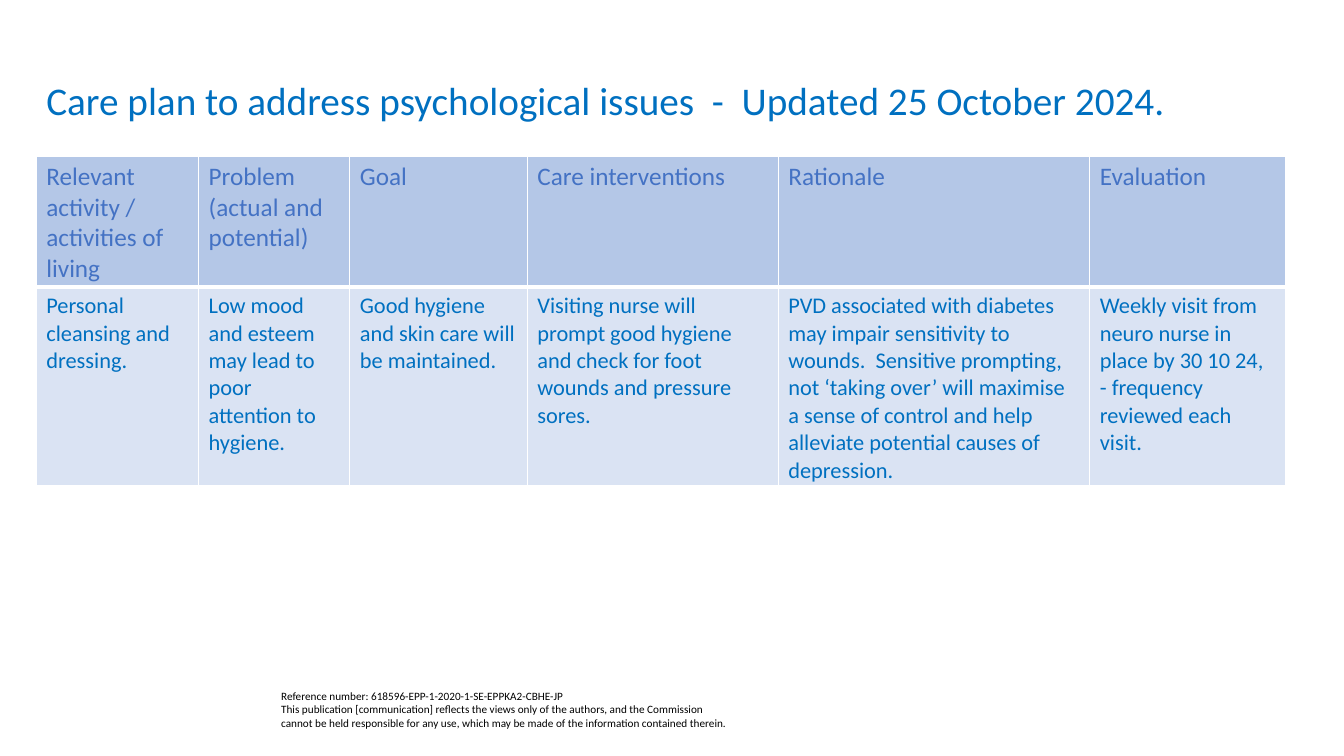
from lxml import etree
from pptx import Presentation, util as u
from pptx.dml.color import RGBColor
from pptx.enum import text
from pptx.oxml.ns import qn

PX = 9144  # 100 px to the inch
COLOURS = {"blue": "0070C0", "heading": "4472C4", "header_fill": "B4C7E7",
           "body_fill": "DAE3F3", "border": "FFFFFF", "black": "000000"}


def write(frame, words, size, colour):
    frame.word_wrap = True
    paragraph = frame.paragraphs[0]
    paragraph.text = words
    paragraph.alignment = text.PP_ALIGN.LEFT
    for run in paragraph.runs:
        run.font.name = "Calibri"
        run.font.size = u.Pt(size)
        run.font.bold = False
        run.font.color.rgb = RGBColor.from_string(COLOURS[colour])


def add_borders(cell, bottom_width):
    properties = cell._tc.get_or_add_tcPr()
    for side, width in zip("LRTB", (1, 1, 1, bottom_width)):
        line = etree.SubElement(properties, qn(f"a:ln{side}"), w=str(u.Pt(width)))
        fill = etree.SubElement(line, qn("a:solidFill"))
        etree.SubElement(fill, qn("a:srgbClr"), val=COLOURS["border"])


deck = Presentation()
deck.slide_width, deck.slide_height = 1333 * PX, 750 * PX
slide = deck.slides.add_slide(deck.slide_layouts[5])

title = slide.shapes.title
title.left, title.top, title.width, title.height = [n * PX for n in (36, 71, 1221, 57)]
title.text_frame.vertical_anchor = text.MSO_ANCHOR.TOP
title.text_frame.auto_size = text.MSO_AUTO_SIZE.SHAPE_TO_FIT_TEXT
write(title.text_frame,
      "Care plan to address psychological issues  -  Updated 25 October 2024.", 28, "blue")

reference = slide.shapes.add_textbox(*[n * PX for n in (269, 679, 464, 50)])
reference.text_frame.auto_size = text.MSO_AUTO_SIZE.SHAPE_TO_FIT_TEXT
write(reference.text_frame,
      "Reference number: 618596-EPP-1-2020-1-SE-EPPKA2-CBHE-JP\n"
      "This publication [communication] reflects the views only of the authors, and the "
      "Commission cannot be held responsible for any use, which may be made of the "
      "information contained therein.", 8, "black")

# Column width, heading, entry
plan_columns = [
    (161, "Relevant activity / activities of living", "Personal cleansing and dressing."),
    (150, "Problem (actual and potential)",
     "Low mood and esteem may lead to poor attention to hygiene."),
    (176, "Goal", "Good hygiene and skin care will be maintained."),
    (249, "Care interventions",
     "Visiting nurse will prompt good hygiene and check for foot wounds and pressure sores."),
    (309, "Rationale",
     "PVD associated with diabetes may impair sensitivity to wounds.  Sensitive prompting, "
     "not ‘taking over’ will maximise a sense of control and help alleviate potential "
     "causes of depression."),
    (194, "Evaluation",
     "Weekly visit from neuro nurse in place by 30 10 24, - frequency reviewed each visit."),
]
# Row height, text size, text colour, fill, bottom border
row_formats = [(130, 18, "heading", "header_fill", 3), (197, 16, "blue", "body_fill", 1)]

care_plan = slide.shapes.add_table(
    len(row_formats), len(plan_columns), *[n * PX for n in (36, 155, 1239, 327)]).table
for column, (width, *entries) in enumerate(plan_columns):
    care_plan.columns[column].width = width * PX
    for row, (height, size, colour, fill, bottom) in enumerate(row_formats):
        care_plan.rows[row].height = height * PX
        cell = care_plan.cell(row, column)
        add_borders(cell, bottom)
        cell.fill.solid()
        cell.fill.fore_color.rgb = RGBColor.from_string(COLOURS[fill])
        write(cell.text_frame, entries[row], size, colour)

deck.save("out.pptx")
